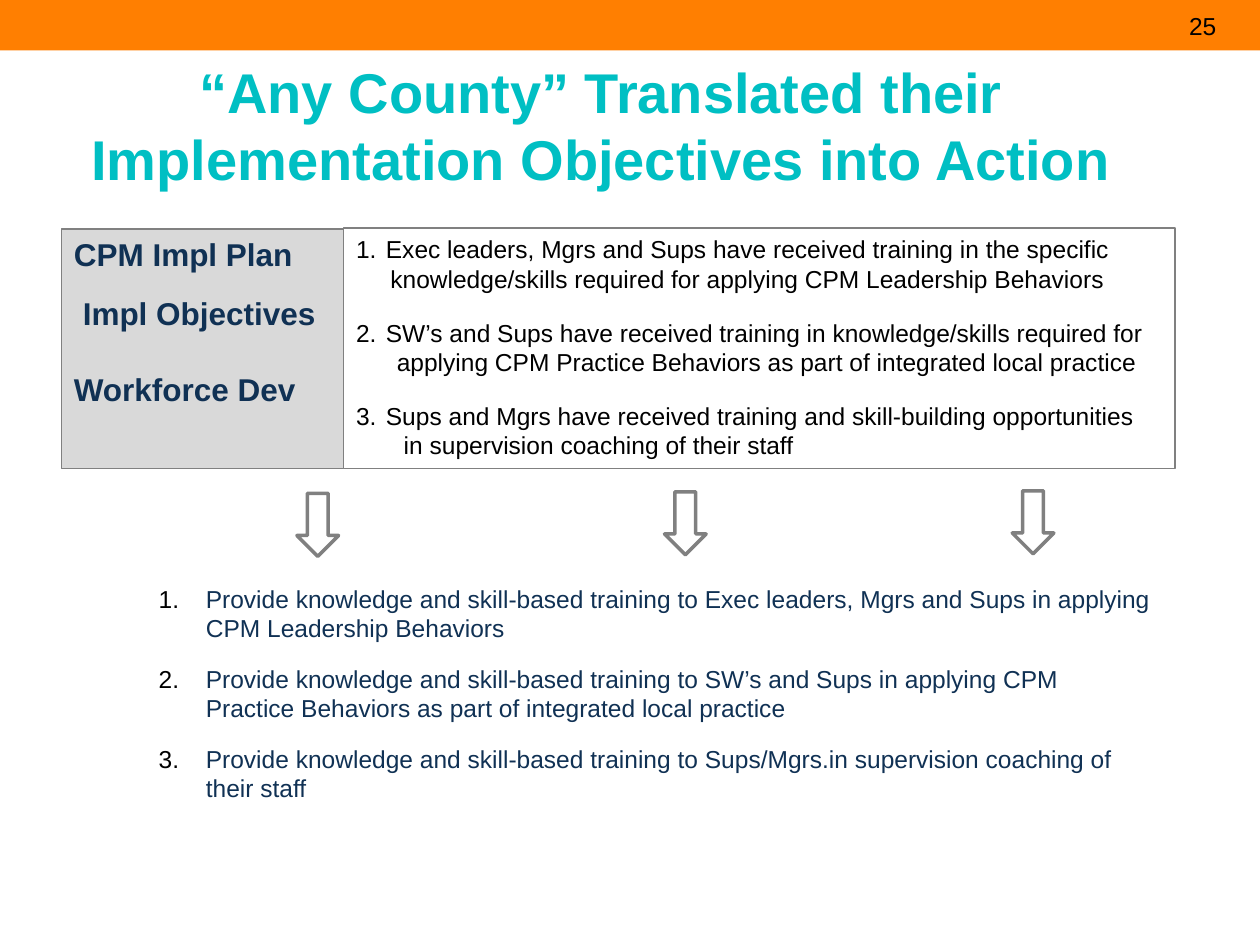
from lxml import etree
from pptx import Presentation
from pptx.dml.color import RGBColor
from pptx.enum.shapes import MSO_SHAPE
from pptx.enum.text import MSO_ANCHOR, PP_ALIGN
from pptx.oxml.ns import qn
from pptx.util import Cm, Pt

RECT = MSO_SHAPE.RECTANGLE
PROCESS = MSO_SHAPE.FLOWCHART_PROCESS
ARROW = MSO_SHAPE.RIGHT_ARROW
TOP, MIDDLE = MSO_ANCHOR.TOP, MSO_ANCHOR.MIDDLE
LEFT, CENTER = PP_ALIGN.LEFT, PP_ALIGN.CENTER

ORANGE = RGBColor(0xFF, 0x7F, 0x01)
TEAL = RGBColor(0x00, 0xBF, 0xC3)
NAVY = RGBColor(0x10, 0x31, 0x54)
BLACK = RGBColor(0x00, 0x00, 0x00)
WHITE = RGBColor(0xFF, 0xFF, 0xFF)
PALE = RGBColor(0xD9, 0xD9, 0xD9)
GRAY = RGBColor(0x80, 0x80, 0x80)

prs = Presentation()
prs.slide_width, prs.slide_height = Cm(25.4), Cm(19.05)
slide = prs.slides.add_slide(prs.slide_layouts[6])
shapes = slide.shapes


def add_box(kind, left, top, width, height, fill=None, line=None):
    """Add a shape; line is its width in points, or None for no outline."""
    box = shapes.add_shape(kind, Cm(left), Cm(top), Cm(width), Cm(height))
    box.shadow.inherit = False
    if fill is None:
        box.fill.background()
    else:
        box.fill.solid()
        box.fill.fore_color.rgb = fill
    if line is None:
        box.line.fill.background()
    else:
        box.line.color.rgb = GRAY
        box.line.width = Pt(line)
    box.text_frame.word_wrap = True
    box.text_frame.vertical_anchor = TOP
    return box


def add_para(frame, text, size, color, bold=False, indent=0, number=0, hang=0):
    """Fill the next paragraph; indent and hang are in cm, number 0 means none."""
    para = frame.paragraphs[0]
    if para.runs:
        para = frame.add_paragraph()
    para.text = text
    para.alignment = LEFT
    props = para._p.get_or_add_pPr()
    props.set("marL", str(Cm(indent)))
    props.set("indent", str(Cm(-hang)))
    if number:
        tint = etree.SubElement(props, qn("a:buClr"))
        etree.SubElement(tint, qn("a:srgbClr"), val=str(BLACK))
        etree.SubElement(props, qn("a:buFont"), typeface="Arial")
        etree.SubElement(props, qn("a:buAutoNum"), type="arabicPeriod",
                         startAt=str(number))
    font = para.runs[0].font
    font.name, font.size, font.bold = "Arial", Pt(size), bold
    font.color.rgb = color
    return para


add_box(RECT, 0, 0, 25.4, 1.02, ORANGE)

title = shapes.add_textbox(Cm(1.12), Cm(0.86), Cm(22), Cm(3.3)).text_frame
title.word_wrap = True
title.vertical_anchor = MIDDLE
para = add_para(title, "“Any County” Translated their Implementation Objectives into Action",
                32, TEAL, bold=True)
para.alignment = CENTER

# Action steps
steps = [
    "Provide knowledge and skill-based training to Exec leaders, Mgrs and Sups "
    "in applying CPM Leadership Behaviors",
    "Provide knowledge and skill-based training to SW’s and Sups in applying CPM "
    "Practice Behaviors as part of integrated local practice",
    "Provide knowledge and skill-based training to Sups/Mgrs.in supervision "
    "coaching of their staff",
]
frame = add_box(PROCESS, 2.95, 11.86, 20.55, 4.75, WHITE).text_frame
frame.vertical_anchor = MIDDLE
frame.margin_top, frame.margin_bottom = 0, Cm(0.52)
for step in steps:
    para = add_para(frame, step, 14, NAVY, indent=0.95, number=1, hang=0.95)
    para.space_after = Pt(12)
para.space_after = Pt(0)

# Objectives: first line, second line, indent of the second line
goals = [
    ("Exec leaders, Mgrs and Sups have received training in the specific",
     "knowledge/skills required for applying CPM Leadership Behaviors", 0.69),
    ("SW’s and Sups have received training in knowledge/skills required for",
     "applying CPM Practice Behaviors as part of integrated local practice", 0.82),
    ("Sups and Mgrs have received training and skill-building opportunities",
     "in supervision coaching of their staff", 0.96),
]
frame = add_box(RECT, 6.93, 4.6, 16.76, 4.85, line=0.75).text_frame
for number, (first, second, indent) in enumerate(goals, 1):
    add_para(frame, first, 14, BLACK, indent=0.6, number=number, hang=0.6)
    para = add_para(frame, second, 14, BLACK, indent=indent)
    para.space_after = Pt(14)

# Plan labels: text, indent, space before
labels = [("CPM Impl Plan", 0, 0), ("Impl Objectives", 0.18, 12), ("Workforce Dev", 0, 22)]
frame = add_box(RECT, 1.24, 4.62, 5.69, 4.83, PALE, 0.75).text_frame
for text, indent, gap in labels:
    para = add_para(frame, text, 18, NAVY, bold=True, indent=indent)
    para.space_before = Pt(gap)

for left, top in [(5.77, 10.16), (13.18, 10.13), (20.19, 10.11)]:
    add_box(ARROW, left, top, 1.27, 0.84, line=2).rotation = 90

page = shapes.add_textbox(Cm(23.72), Cm(0.1), Cm(1.07), Cm(0.86)).text_frame
page.word_wrap = False
add_para(page, "25", 14, BLACK)

prs.save("out.pptx")
